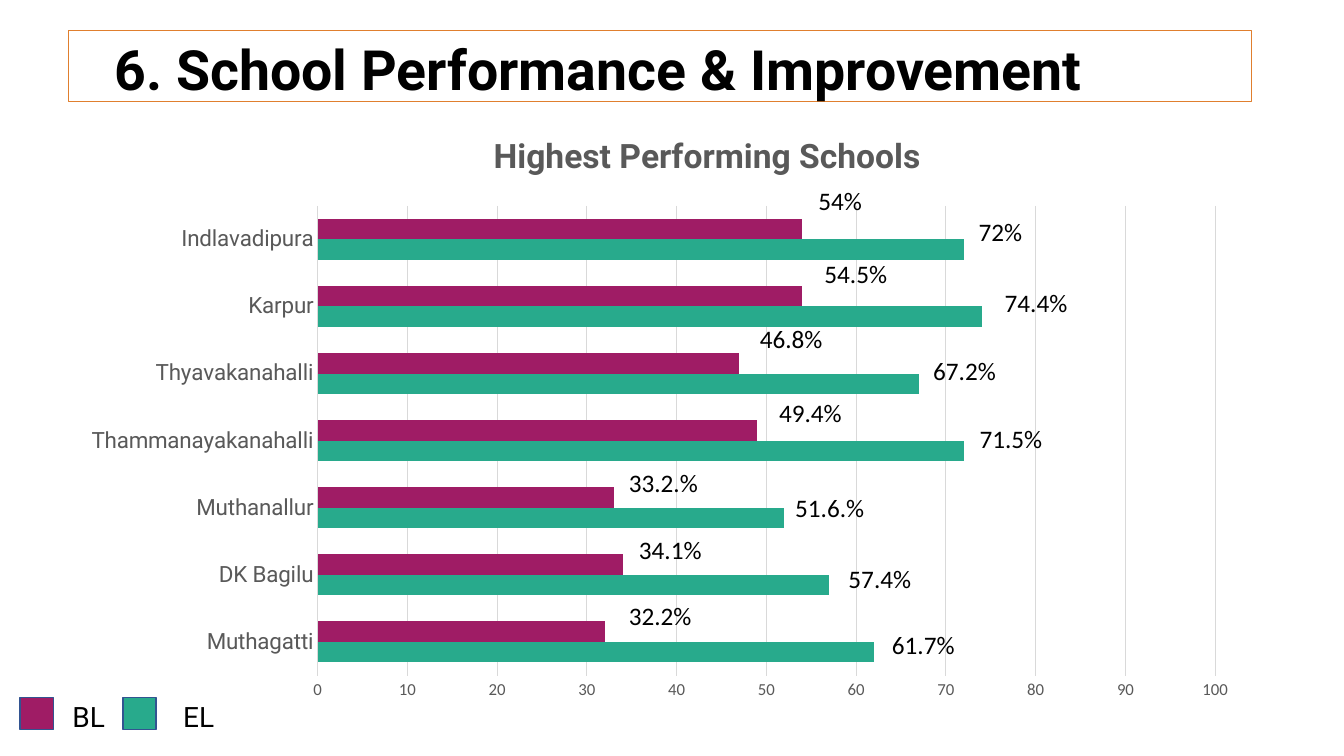
from dataclasses import dataclass

from lxml import etree
from pptx import Presentation
from pptx import util as u
from pptx.chart import data as chart_data
from pptx.dml.color import RGBColor
from pptx.enum import chart as chart_enum, shapes, text
from pptx.oxml import ns

BLACK = RGBColor(0x00, 0x00, 0x00)
GREY = RGBColor(0x59, 0x59, 0x59)
GRID = RGBColor(0xD9, 0xD9, 0xD9)
ORANGE = RGBColor(0xE0, 0x7F, 0x2E)
NAVY = RGBColor(0x32, 0x54, 0x91)
GREEN = RGBColor(0x28, 0xAA, 0x8C)
PLUM = RGBColor(0x9F, 0x1C, 0x65)
HEADING_FONT = "Roboto"
BODY_FONT = "Calibri"


@dataclass(frozen=True)
class Box:
    left: float
    top: float
    width: float = 0
    height: float = 0

    def lengths(self) -> tuple:
        return tuple(u.Pt(n) for n in (self.left, self.top, self.width, self.height))


@dataclass(frozen=True)
class School:
    name: str
    baseline: float
    endline: float
    baseline_at: tuple[float, float]
    endline_at: tuple[float, float]
    suffix: str = "%"


@dataclass(frozen=True)
class LegendKey:
    label: str
    color: RGBColor
    swatch_left: float
    label_left: float
    label_width: float


CHART = Box(49, 90.7, 845.3, 416.9)
CHART_TITLE = Box(348.3, 87)
PLOT = Box(226.9, 147, 641.2, 335.6)

# Schools from the bottom bar to the top one
SCHOOLS = [
    School("Muthagatti", 32.2, 61.7, (442.1, 425.5), (630, 445.7)),
    School("DK Bagilu", 34.1, 57.4, (449.3, 378), (599, 398.9)),
    School("Muthanallur", 33.2, 51.6, (442.1, 330.5), (560.9, 347.8), ".%"),
    School("Thammanayakanahalli", 49.4, 71.5, (549.4, 280.1), (692.6, 298.8)),
    School("Thyavakanahalli", 46.8, 67.2, (535.7, 227.5), (659.5, 250.6)),
    School("Karpur", 54.5, 74.4, (581.8, 180.7), (710.6, 201.6)),
    School("Indlavadipura", 54, 72, (577.4, 128.9), (691.9, 151.2)),
]
LEGEND = [
    LegendKey("BL", PLUM, 14.4, 44.6, 49),
    LegendKey("EL", GREEN, 87.8, 123.8, 119.5),
]


def style_font(font, name: str, size: float, color: RGBColor, bold: bool = False) -> None:
    font.name = name
    font.size = u.Pt(size)
    font.bold = bold
    font.color.rgb = color


def add_text(slide, box: Box, words: str, name: str, size: float, bold: bool = False):
    shape = slide.shapes.add_textbox(*box.lengths())
    shape.text_frame.word_wrap = True
    paragraph = shape.text_frame.paragraphs[0]
    paragraph.text = words
    style_font(paragraph.font, name, size, BLACK, bold)
    return shape


def add_rectangle(slide, box: Box, fill: RGBColor | None, line: RGBColor, width: float) -> None:
    shape = slide.shapes.add_shape(shapes.MSO_SHAPE.RECTANGLE, *box.lengths())
    shape.shadow.inherit = False
    if fill is None:
        shape.fill.background()
    else:
        shape.fill.solid()
        shape.fill.fore_color.rgb = fill
    shape.line.color.rgb = line
    shape.line.width = u.Pt(width)


def place(parent, box: Box) -> None:
    """Fix a chart part at a box on the slide, stored as fractions of the chart."""
    layout = parent.find(ns.qn("c:layout"))
    if layout is None:
        layout = etree.Element(ns.qn("c:layout"))
        parent.insert(0, layout)
    settings = {
        "xMode": "edge",
        "yMode": "edge",
        "x": (box.left - CHART.left) / CHART.width,
        "y": (box.top - CHART.top) / CHART.height,
    }
    if box.width:
        settings = {"layoutTarget": "inner", **settings,
                    "w": box.width / CHART.width, "h": box.height / CHART.height}
    manual = etree.SubElement(layout, ns.qn("c:manualLayout"))
    for tag, value in settings.items():
        etree.SubElement(manual, ns.qn(f"c:{tag}")).set("val", str(value))


def add_school_chart(slide) -> None:
    data = chart_data.CategoryChartData()
    data.categories = [school.name for school in SCHOOLS]
    data.add_series("Series 1", [round(school.endline) for school in SCHOOLS])
    data.add_series("Series 2", [round(school.baseline) for school in SCHOOLS])
    chart = slide.shapes.add_chart(
        chart_enum.XL_CHART_TYPE.BAR_CLUSTERED, *CHART.lengths(), data
    ).chart
    style_font(chart.font, BODY_FONT, 10, BLACK)
    chart.has_legend = False

    # Chart title
    chart.has_title = True
    paragraph = chart.chart_title.text_frame.paragraphs[0]
    paragraph.text = "Highest Performing Schools"
    style_font(paragraph.font, HEADING_FONT, 24, GREY, bold=True)
    place(chart.element.find(f".//{ns.qn('c:title')}"), CHART_TITLE)

    # Bars
    plot = chart.plots[0]
    plot.gap_width = 128
    plot.overlap = 0
    plot.vary_by_categories = False
    for series, color in zip(plot.series, (GREEN, PLUM)):
        series.format.fill.solid()
        series.format.fill.fore_color.rgb = color
    place(chart.element.find(f".//{ns.qn('c:plotArea')}"), PLOT)

    # Axes
    names, values = chart.category_axis, chart.value_axis
    for axis in (names, values):
        axis.major_tick_mark = chart_enum.XL_TICK_MARK.NONE
        axis.minor_tick_mark = chart_enum.XL_TICK_MARK.NONE
    style_font(names.tick_labels.font, HEADING_FONT, 16, GREY)
    style_font(values.tick_labels.font, BODY_FONT, 12, GREY)
    values.minimum_scale, values.maximum_scale, values.major_unit = 0, 100, 10
    values.has_major_gridlines = True
    values.format.line.fill.background()
    for line in (names.format.line, values.major_gridlines.format.line):
        line.color.rgb = GRID
        line.width = u.Pt(0.75)


def main() -> None:
    presentation = Presentation()
    presentation.slide_width = u.Pt(960)
    presentation.slide_height = u.Pt(540)
    slide = presentation.slides.add_slide(presentation.slide_layouts[6])

    # Framed heading
    add_rectangle(slide, Box(49, 21.6, 845.3, 51.1), None, ORANGE, 0.75)
    heading = add_text(slide, Box(74.9, 12.2, 810.7, 78.5),
                       "6. School Performance & Improvement", HEADING_FONT, 39.6, bold=True)
    heading.text_frame.vertical_anchor = text.MSO_ANCHOR.MIDDLE
    heading.text_frame.paragraphs[0].line_spacing = 0.9

    # Chart with its percentages
    add_school_chart(slide)
    for school in SCHOOLS:
        for value, place_at in ((school.baseline, school.baseline_at),
                                (school.endline, school.endline_at)):
            add_text(slide, Box(*place_at, 75.6, 28.8),
                     f"{value:g}{school.suffix}", BODY_FONT, 18)

    # Legend
    for key in LEGEND:
        add_rectangle(slide, Box(key.swatch_left, 498.2, 23.8, 23), key.color, NAVY, 1)
        add_text(slide, Box(key.label_left, 496.1, key.label_width, 31.7),
                 key.label, HEADING_FONT, 20)

    presentation.save("out.pptx")


if __name__ == "__main__":
    main()
